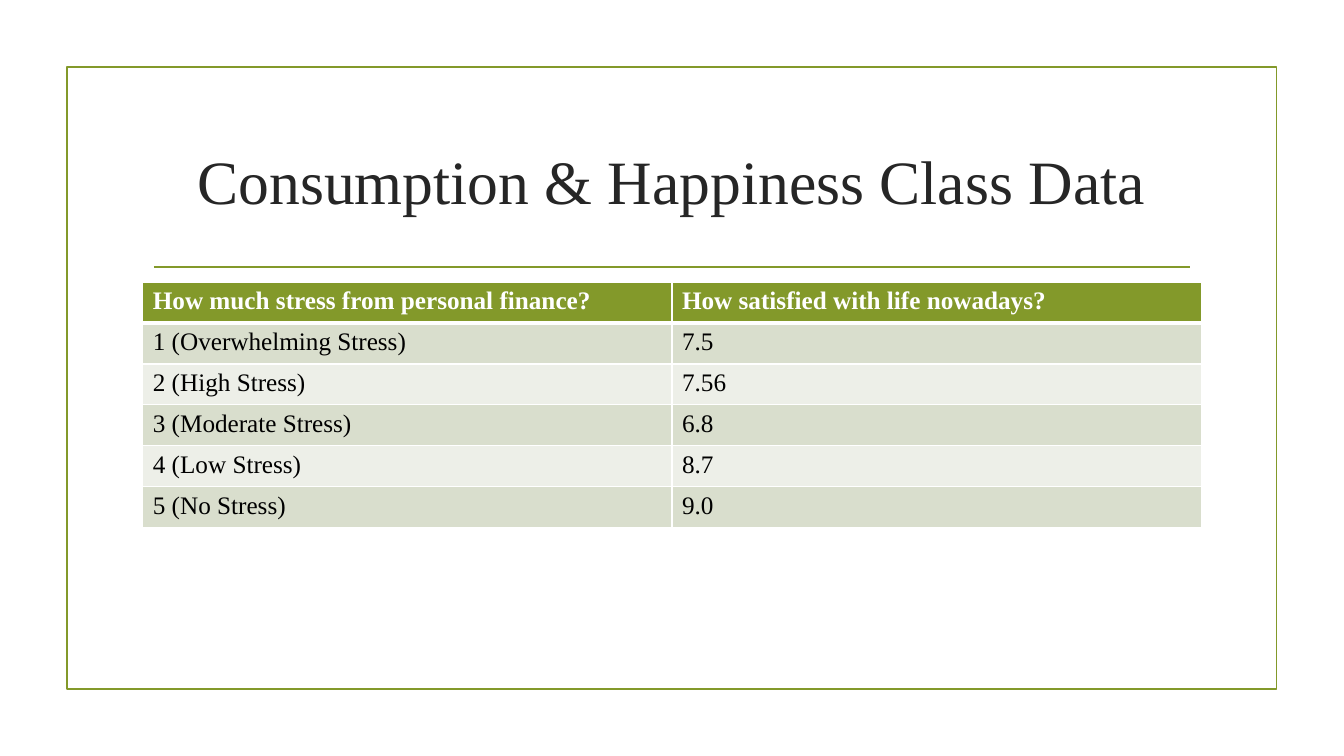
from lxml import etree
from pptx import Presentation
from pptx import util as u
from pptx.dml.color import RGBColor
from pptx.enum import shapes, text
from pptx.oxml.ns import qn

COLORS = {
    "green": "83992A",
    "title": "262626",
    "white": "FFFFFF",
    "black": "000000",
    "dark band": "D9DECD",
    "light band": "EDEFE8",
}
FONT = "Times New Roman"
ROWS = [
    ("How much stress from personal finance?", "How satisfied with life nowadays?"),
    ("1 (Overwhelming Stress)", "7.5"),
    ("2 (High Stress)", "7.56"),
    ("3 (Moderate Stress)", "6.8"),
    ("4 (Low Stress)", "8.7"),
    ("5 (No Stress)", "9.0"),
]


def color(name):
    return RGBColor.from_string(COLORS[name])


def points(*lengths):
    return [u.Pt(length) for length in lengths]


def style_font(para, size, name, bold=False):
    para.font.name = FONT
    para.font.size = u.Pt(size)
    para.font.bold = bold
    para.font.color.rgb = color(name)


def style_line(line):
    line.color.rgb = color("green")
    line.width = u.Pt(1.25)


def add_frame(page, left, top, width, height):
    frame = page.shapes.add_shape(
        shapes.MSO_SHAPE.RECTANGLE, *points(left, top, width, height))
    frame.shadow.inherit = False
    frame.fill.background()
    style_line(frame.line)


def add_heading(page, left, top, width, height):
    box = page.shapes.add_textbox(*points(left, top, width, height))
    box.text_frame.word_wrap = True
    box.text_frame.vertical_anchor = text.MSO_ANCHOR.MIDDLE
    para = box.text_frame.paragraphs[0]
    para.text = "Consumption & Happiness Class Data"
    para.alignment = text.PP_ALIGN.CENTER
    style_font(para, 44, "title")

    inset, rule_top = 8, top + height + 10.8
    rule = page.shapes.add_connector(
        shapes.MSO_CONNECTOR.STRAIGHT,
        *points(left + inset, rule_top, left + width - inset, rule_top))
    style_line(rule.line)
    etree.SubElement(rule._element.spPr, qn("a:effectLst"))


def add_border(cell, side, width):
    border = etree.SubElement(
        cell._tc.get_or_add_tcPr(), qn(f"a:ln{side}"), w=str(u.Pt(width)))
    fill = etree.SubElement(border, qn("a:solidFill"))
    etree.SubElement(fill, qn("a:srgbClr"), val=COLORS["white"])


def add_data_table(page, left, top, width, height):
    table = page.shapes.add_table(
        len(ROWS), len(ROWS[0]), *points(left, top, width, height)).table
    for row, values in enumerate(ROWS):
        header = row == 0
        band = "green" if header else "dark band" if row % 2 else "light band"
        borders = {"L": 1, "R": 1, "T": 3 if row == 1 else 1, "B": 3 if header else 1}
        for column, value in enumerate(values):
            cell = table.cell(row, column)
            for side, thickness in borders.items():
                add_border(cell, side, thickness)
            cell.fill.solid()
            cell.fill.fore_color.rgb = color(band)
            para = cell.text_frame.paragraphs[0]
            para.text = value
            style_font(para, 18, "white" if header else "black", header)


def main():
    deck = Presentation()
    deck.slide_width, deck.slide_height = points(960, 540)
    page = deck.slides.add_slide(deck.slide_layouts[6])
    add_frame(page, 47.75, 48, 864, 444.25)
    add_heading(page, 102, 77, 756, 103)
    add_data_table(page, 102, 201.6, 756, 175.2)
    deck.save("out.pptx")


if __name__ == "__main__":
    main()
